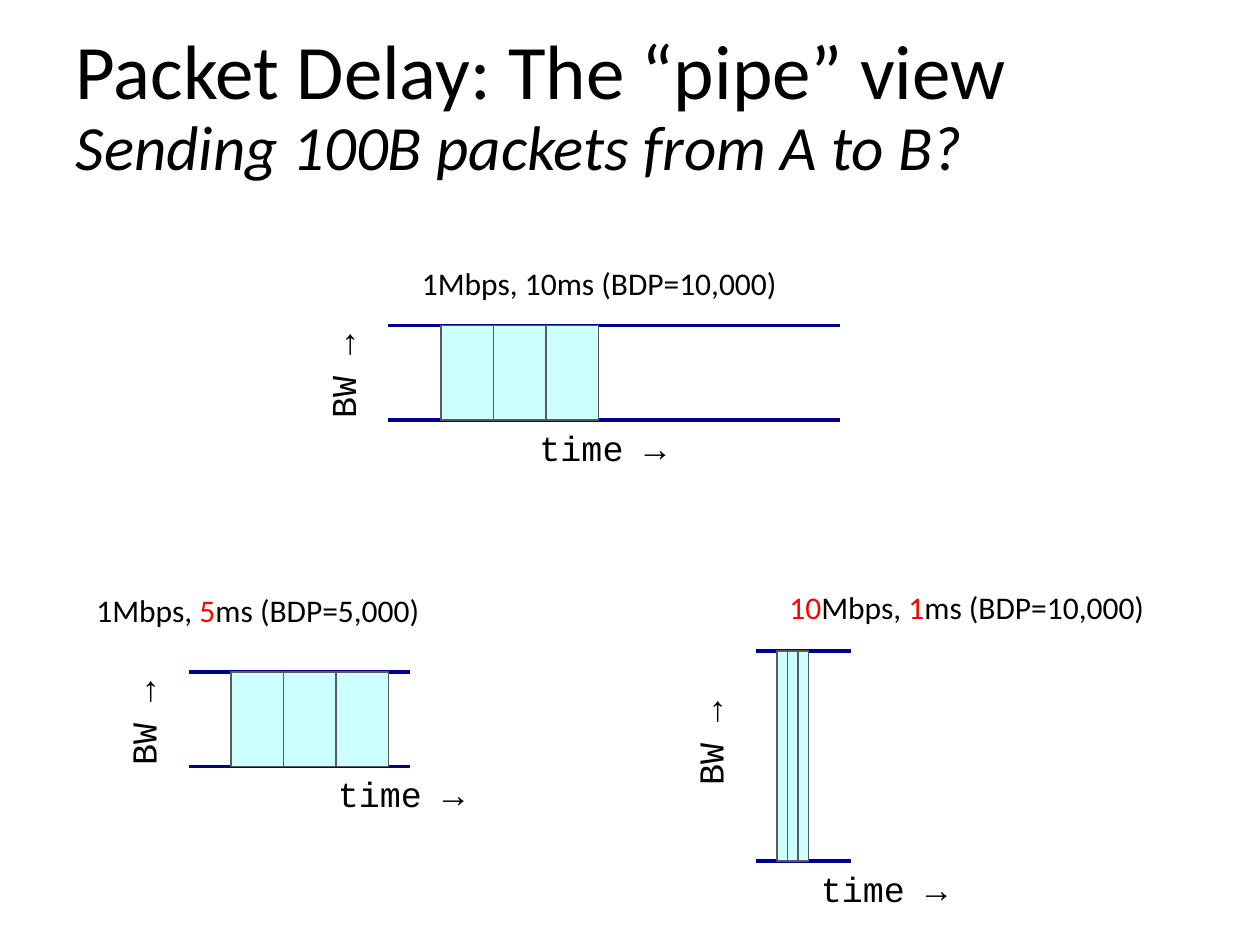
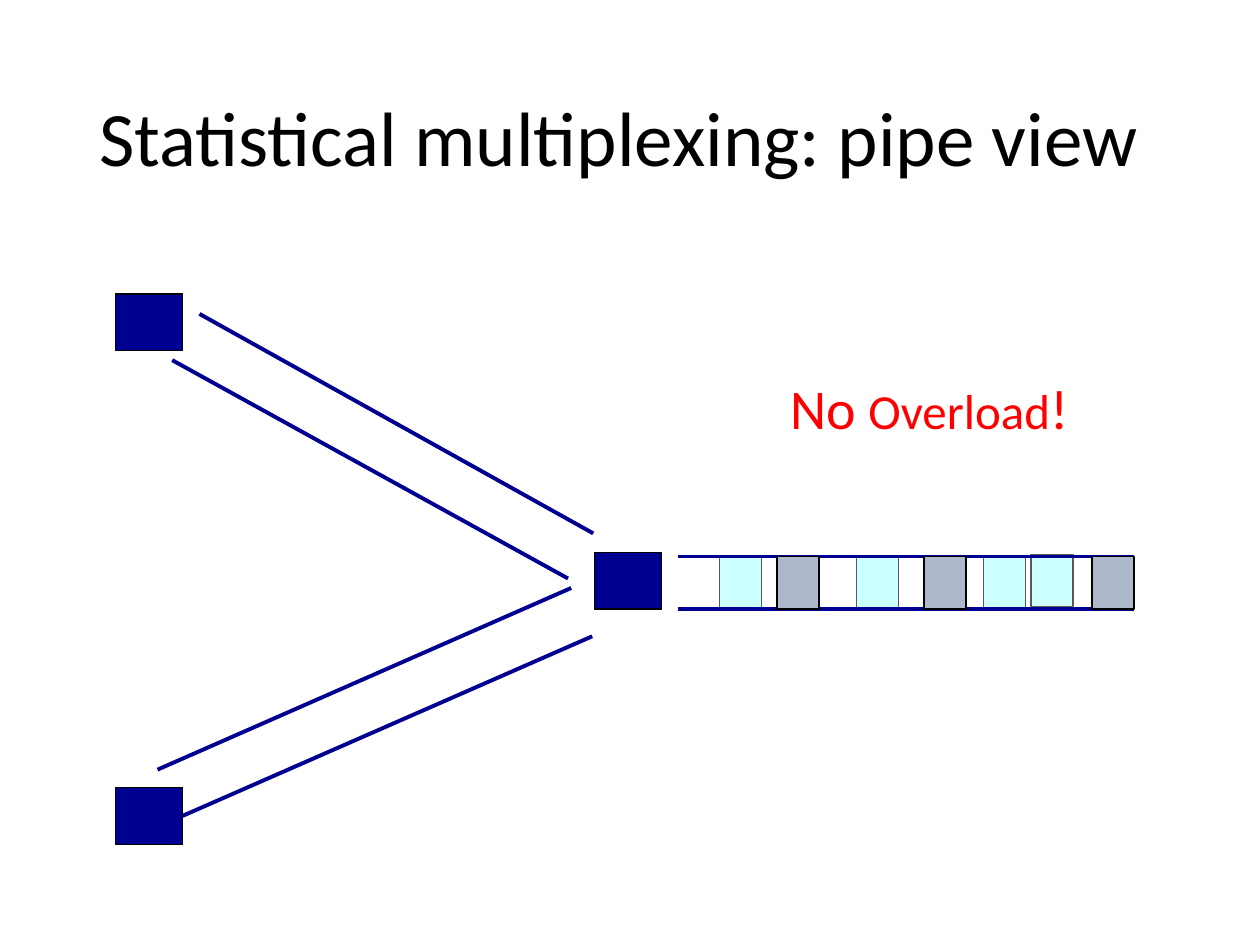
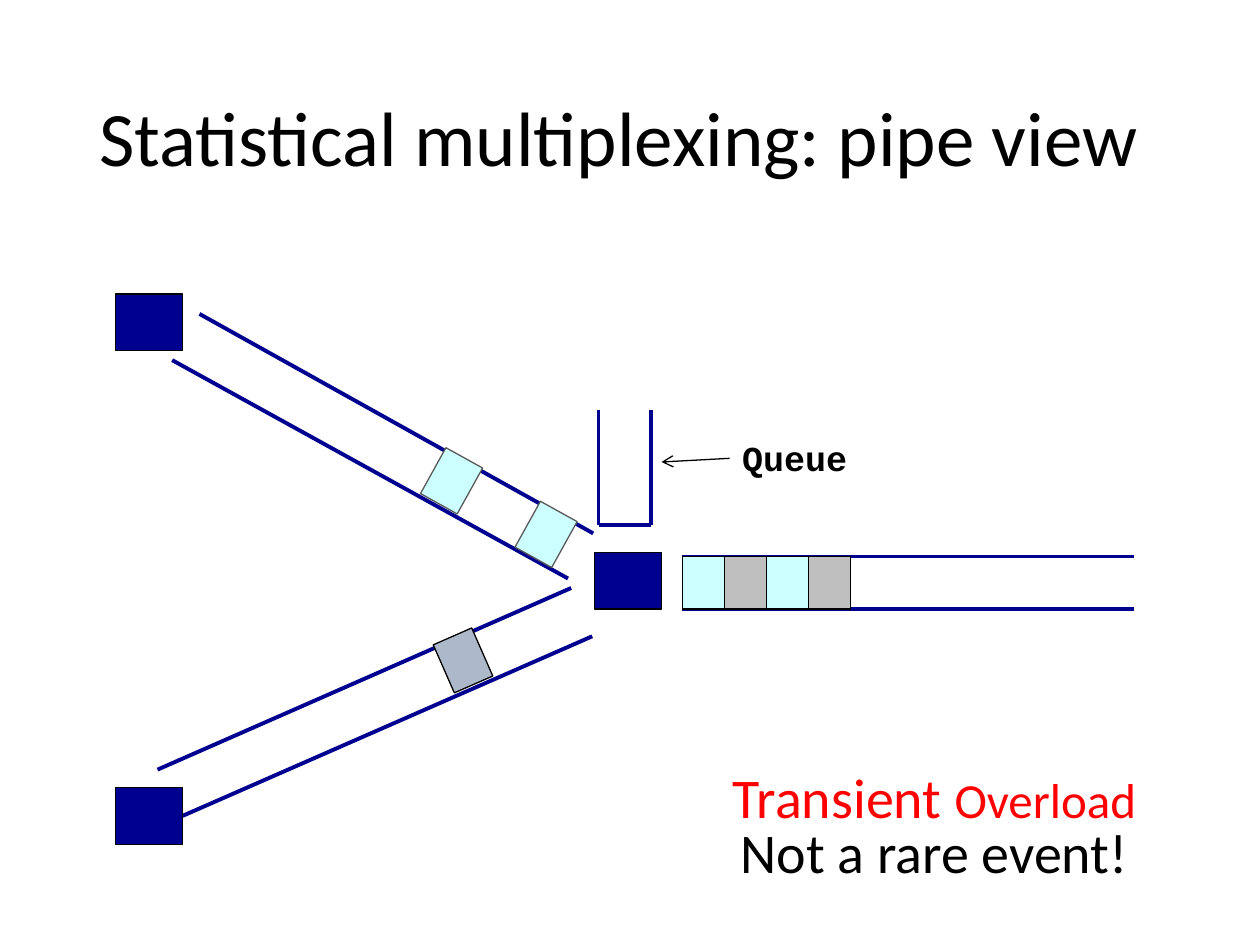
"""Build three slides on packet delay and statistical multiplexing seen as pipes."""
from lxml import etree
from pptx import Presentation
from pptx.dml.color import RGBColor
from pptx.enum.shapes import MSO_CONNECTOR, MSO_SHAPE
from pptx.enum.text import MSO_ANCHOR, MSO_AUTO_SIZE, PP_ALIGN
from pptx.oxml.ns import qn
from pptx.util import Inches, Pt

STRAIGHT = MSO_CONNECTOR.STRAIGHT
RECTANGLE = MSO_SHAPE.RECTANGLE
MIDDLE = MSO_ANCHOR.MIDDLE
FIXED, GROW = MSO_AUTO_SIZE.NONE, MSO_AUTO_SIZE.SHAPE_TO_FIT_TEXT
LEFT, CENTER = PP_ALIGN.LEFT, PP_ALIGN.CENTER
LEFT_SIDE, RIGHT_SIDE = 1, 3

NAVY, CYAN, STEEL, SILVER = "000090", "CCFFFF", "ADB9CA", "BFBFBF"
BLACK, GRAY, RED = "000000", "595959", "FF0000"
BODY_FONT, CODE_FONT = "Calibri", "Courier New"
UNIT = Inches(1) // 12
PACKET_WIDTH, PACKET_HEIGHT = 4, 5


def draw(slide, lines, boxes, line_color=NAVY, line_width=2.25):
    """Draw lines, then boxes over them, in grid units, and return both lists."""
    connectors, shapes = [], []
    for ends in lines:
        connector = slide.shapes.add_connector(STRAIGHT, *(round(end * UNIT) for end in ends))
        connector.line.color.rgb = RGBColor.from_string(line_color)
        connector.line.width = Pt(line_width)
        etree.SubElement(connector._element.spPr, qn("a:effectLst"))
        connectors.append(connector)
    for *bounds, fill, outline, rotation in boxes:
        shape = slide.shapes.add_shape(RECTANGLE, *(round(value * UNIT) for value in bounds))
        shape.shadow.inherit = False
        shape.fill.solid()
        shape.fill.fore_color.rgb = RGBColor.from_string(fill)
        shape.line.color.rgb = RGBColor.from_string(outline)
        shape.line.width = Pt(0.75)
        shape.rotation = rotation
        shapes.append(shape)
    return connectors, shapes


def write(slide, bounds, runs, font=BODY_FONT, spacing=1.0, centered=False):
    """Add a text box, in grid units, from runs of text, colour and size."""
    box = slide.shapes.add_textbox(*(round(value * UNIT) for value in bounds))
    box.text_frame.word_wrap = centered
    box.text_frame.auto_size = GROW
    paragraph = box.text_frame.paragraphs[0]
    paragraph.alignment = CENTER if centered else LEFT
    paragraph.line_spacing = spacing
    paragraph.font.name = font
    for text, color, size in runs:
        run = paragraph.add_run()
        run.text = text
        run.font.color.rgb = RGBColor.from_string(color)
        run.font.size = Pt(size)
    return box


presentation = Presentation()
presentation.slide_width, presentation.slide_height = Inches(10), Inches(7.5)

titles = [
    ("Packet Delay: The “pipe” view", (6, 2.6, 111, 15.4)),
    ("Statistical multiplexing: pipe view", (8.25, 4.8, 103.5, 17.4)),
    ("Statistical multiplexing: pipe view", (8.25, 4.8, 103.5, 17.4)),
]
slides = []
for text, bounds in titles:
    slide = presentation.slides.add_slide(presentation.slide_layouts[5])
    title = slide.shapes.title
    title.left, title.top, title.width, title.height = (round(value * UNIT) for value in bounds)
    title.text_frame.vertical_anchor = MIDDLE
    title.text_frame.auto_size = FIXED
    paragraph = title.text_frame.paragraphs[0]
    paragraph.alignment = LEFT
    paragraph.line_spacing = 0.9
    paragraph.font.name = BODY_FONT
    paragraph.font.color.rgb = RGBColor.from_string(BLACK)
    run = paragraph.add_run()
    run.text = text
    run.font.size = Pt(44)
    slides.append(slide)
delay_slide, light_slide, overload_slide = slides

paragraph = delay_slide.shapes.title.text_frame.paragraphs[0]
paragraph.add_line_break()
subtitle = paragraph.add_run()
subtitle.text = "Sending 100B packets from A to B?"
subtitle.font.size = Pt(36)
subtitle.font.italic = True

views = [
    ((37, 31, 43, 9), (42, 5), (39, 23.8, 41.8, 5.4), 50.2, 32.5,
     [("1Mbps, 10ms (BDP=10,000)", BLACK, 18)]),
    ((18, 64, 21, 9), (22, 5), (8, 55, 38.4, 5.4), 31, 65.5,
     [("1Mbps, ", BLACK, 18), ("5", RED, 18), ("ms (BDP=5,000)", BLACK, 18)]),
    ((72, 62, 9, 20), (74, 1), (74, 54.7, 41.8, 5.4), 77, 67.4,
     [("10", RED, 18), ("Mbps, ", BLACK, 18), ("1", RED, 18), ("ms (BDP=10,000)", BLACK, 18)]),
]
for pipe, (first, width), caption, time_left, bandwidth_top, runs in views:
    left, top, length, height = pipe
    walls = [(left, y, left + length, y) for y in (top, top + height)]
    packets = [(first + index * width, top, width, height, CYAN, GRAY, 0) for index in range(3)]
    draw(delay_slide, walls, packets)
    write(delay_slide, caption, runs, spacing=1.2)
    write(delay_slide, (time_left, top + height, 15.8, 5.3), [("time →", BLACK, 20)], CODE_FONT)
    bandwidth = write(delay_slide, (left - 10.25, bandwidth_top, 11.8, 5.3),
                      [("BW →", BLACK, 20)], CODE_FONT)
    bandwidth.rotation = 270

nodes = [(left, top, 6.4, 5.4, NAVY, BLACK, 0) for left, top in ((56.6, 52.6), (11, 28), (11, 75))]
input_walls = [
    (19, 29.9, 56.5, 50.8), (16.4, 34.3, 54.1, 55.1),
    (15, 73.3, 54.4, 56), (17.4, 77.7, 56.4, 60.6),
]
for slide in (light_slide, overload_slide):
    connectors, shapes = draw(slide, input_walls, nodes)
    connectors[-1].begin_connect(shapes[-1], RIGHT_SIDE)

flows = [
    (64.6, CYAN, GRAY, [(98.2, 52.8), (93.7, 53), (81.6, 53), (68.5, 53)]),
    (65, STEEL, BLACK, [(74, 53), (104, 53), (88, 53)]),
]
for start, fill, outline, places in flows:
    walls = [(start, y, start + 43, y) for y in (53, 58)]
    draw(light_slide, walls,
         [(*place, PACKET_WIDTH, PACKET_HEIGHT, fill, outline, 0) for place in places])
write(light_slide, (68, 35, 41, 7.7),
      [("No ", RED, 32), ("Overload", RED, 28), ("!", RED, 32)], centered=True)

arriving = [
    (50, 48.4, CYAN, GRAY, 29), (41, 43.3, CYAN, GRAY, 29), (42.1, 60.4, STEEL, BLACK, 336.3),
]
draw(overload_slide, [], [(left, top, PACKET_WIDTH, PACKET_HEIGHT, *style)
                          for left, top, *style in arriving])
departing = [(65 + index * PACKET_WIDTH, 53, PACKET_WIDTH, PACKET_HEIGHT, fill, BLACK, 0)
             for index, fill in enumerate([CYAN, SILVER] * 2)]
draw(overload_slide, [(65, y, 108, y) for y in (53, 58)], departing)

draw(overload_slide, [(57, 39, 57, 50), (62, 39, 62, 50), (57, 50, 62, 50)], [])
queue = write(overload_slide, (69.5, 41, 12.5, 5.3), [("Queue", BLACK, 20)], CODE_FONT)
queue.text_frame.paragraphs[0].font.bold = True
(arrow,), _ = draw(overload_slide, [(69.5, 43.7, 63, 44)], [], BLACK, 0.75)
arrow.begin_connect(queue, LEFT_SIDE)
etree.SubElement(arrow.line._get_or_add_ln(), qn("a:tailEnd"), type="arrow")

write(overload_slide, (61, 72, 56, 7.7),
      [("Transient ", RED, 32), ("Overload", RED, 28)], centered=True)
write(overload_slide, (61, 77.3, 56, 7.7), [("Not a rare event!", BLACK, 32)], centered=True)

presentation.save("out.pptx")
